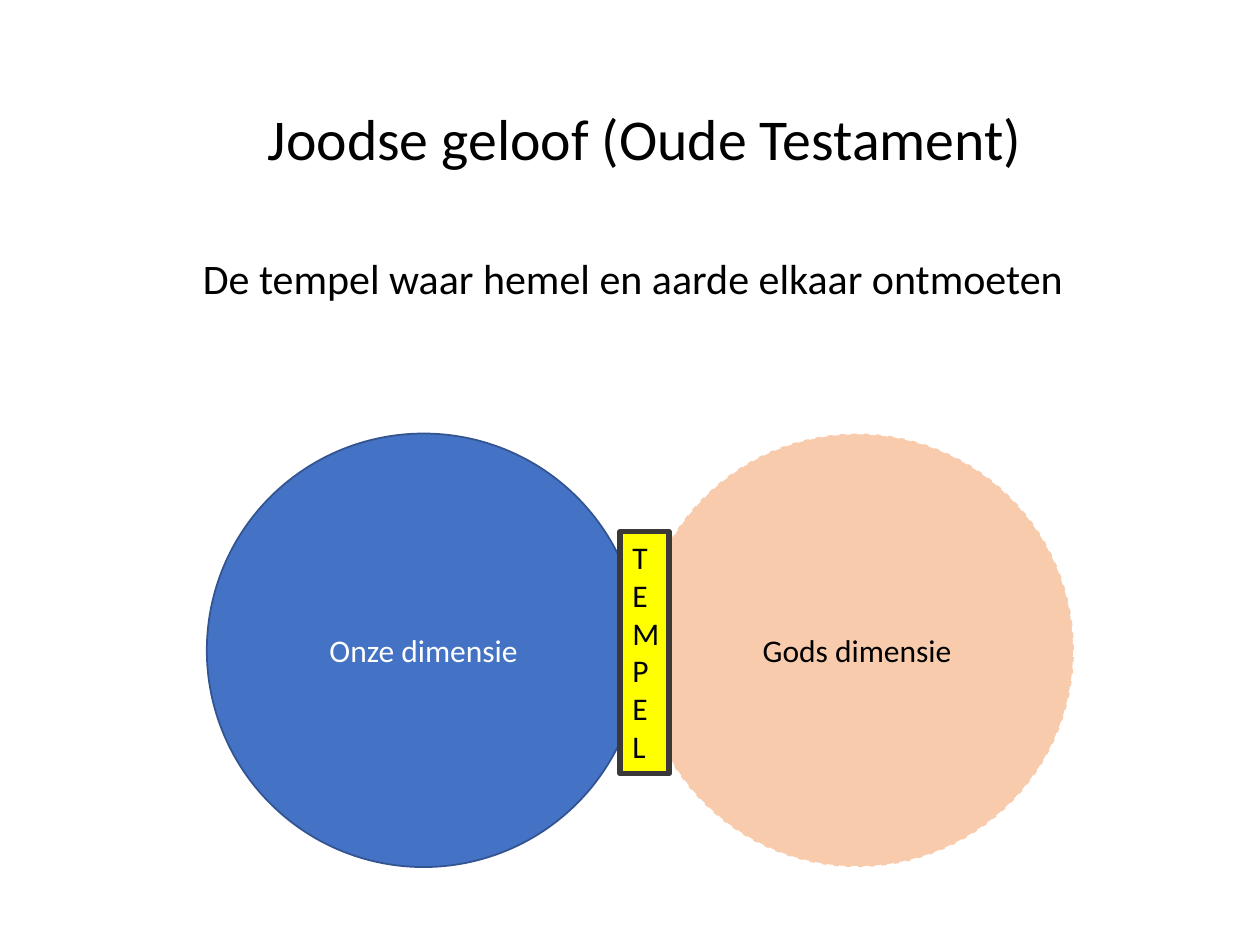
"""Build the slide on the temple as the meeting place of heaven and earth."""
from pptx import Presentation
from pptx.dml.color import RGBColor
from pptx.enum.dml import MSO_LINE
from pptx.enum.shapes import MSO_SHAPE
from pptx.enum.text import MSO_ANCHOR, MSO_AUTO_SIZE, PP_ALIGN
from pptx.util import Cm, Pt


def rgb(value):
    return RGBColor.from_string(value)


class Deck:
    font = "Calibri"
    black = "000000"
    left, width = 1.75, 21.89

    def __init__(self, prs):
        self.s = prs.slides.add_slide(prs.slide_layouts[5])

    def set_text(self, sp, text, size, color=black, align=PP_ALIGN.LEFT,
                 anchor=MSO_ANCHOR.MIDDLE, spacing=1.0):
        tf = sp.text_frame
        tf.word_wrap = True
        tf.auto_size = MSO_AUTO_SIZE.NONE
        tf.vertical_anchor = anchor
        p = tf.paragraphs[0]
        p.text = text
        p.alignment = align
        p.line_spacing = spacing
        p.font.name = self.font
        p.font.size = Pt(size)
        p.font.color.rgb = rgb(color)
        return tf

    def paint(self, sp, fill, line, weight):
        sp.fill.solid()
        sp.fill.fore_color.rgb = rgb(fill)
        sp.line.color.rgb = rgb(line)
        sp.line.width = Pt(weight)

    def title(self, text, top, height, inset):
        sp = self.s.shapes.title
        sp.left, sp.top = Cm(self.left), Cm(top)
        sp.width, sp.height = Cm(self.width), Cm(height)
        tf = self.set_text(sp, text, 33, spacing=0.9)
        tf.margin_left = Cm(inset)

    def body(self, text, top, height, inset):
        sp = self.s.shapes.add_textbox(Cm(self.left), Cm(top), Cm(self.width), Cm(height))
        tf = self.set_text(sp, text, 24, anchor=MSO_ANCHOR.TOP, spacing=0.9)
        tf.margin_left = Cm(inset)

    def circle(self, text, left, top, size, fill, line, color, dash=None):
        sp = self.s.shapes.add_shape(MSO_SHAPE.OVAL, Cm(left), Cm(top), Cm(size), Cm(size))
        sp.shadow.inherit = False
        self.paint(sp, fill, line, 1)
        sp.line.dash_style = dash
        self.set_text(sp, text, 18, color, PP_ALIGN.CENTER)

    def label(self, text, left, top, width, height, fill, line):
        sp = self.s.shapes.add_textbox(Cm(left), Cm(top), Cm(width), Cm(height))
        self.paint(sp, fill, line, 3)
        tf = self.set_text(sp, text, 18, anchor=MSO_ANCHOR.TOP)
        tf.auto_size = MSO_AUTO_SIZE.SHAPE_TO_FIT_TEXT


def main():
    prs = Presentation()
    prs.slide_width, prs.slide_height = Cm(25.4), Cm(19.05)
    deck = Deck(prs)
    deck.title("Joodse geloof (Oude Testament)", 1.02, 3.68, 3.65)
    deck.body("De tempel waar hemel en aarde elkaar ontmoeten", 5.08, 12.09, 2.34)
    left, top, size = 4.17, 8.74, 8.74
    deck.circle("Onze dimensie", left, top, size, "4472C4", "325491", "FFFFFF")
    deck.circle("Gods dimensie", left + size, top, size, "F8CBAD", "FFFFFF",
                deck.black, MSO_LINE.DASH)
    deck.label("TEMPEL", 12.5, 10.72, 0.99, 4.88, "FFFF00", "3B3838")
    prs.save("out.pptx")


if __name__ == "__main__":
    main()
